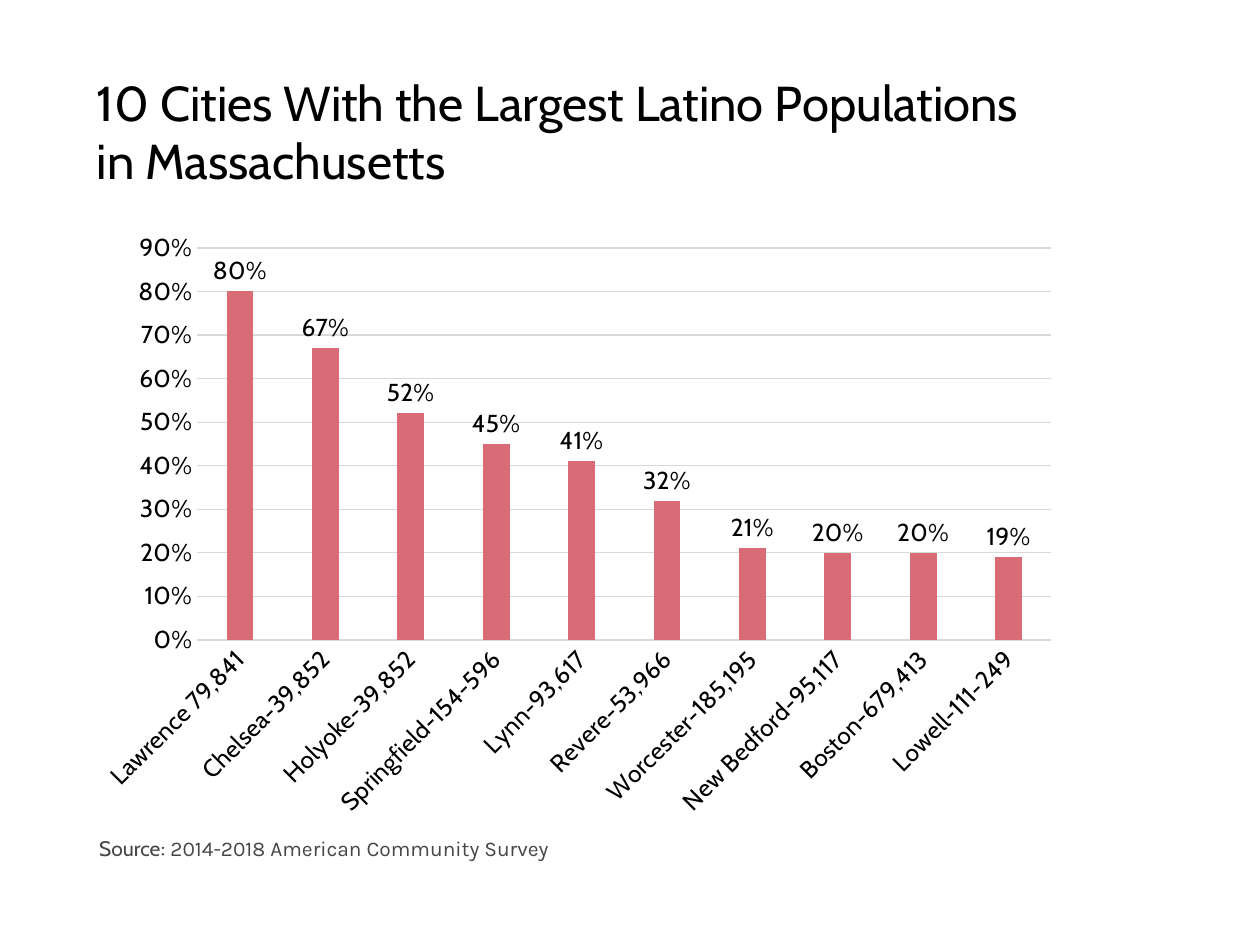
from typing import NamedTuple

from pptx import Presentation
from pptx.chart.data import CategoryChartData
from pptx.dml.color import RGBColor
from pptx.enum.chart import XL_CHART_TYPE, XL_LABEL_POSITION, XL_TICK_MARK
from pptx.enum.text import MSO_ANCHOR
from pptx.util import Cm, Pt

BLACK = RGBColor(0x00, 0x00, 0x00)
GRAY = RGBColor(0x46, 0x46, 0x46)
GRID = RGBColor(0xD9, 0xD9, 0xD9)
ROSE = RGBColor(0xD9, 0x6B, 0x77)
WHITE = RGBColor(0xFF, 0xFF, 0xFF)
HEAD_FONT, BODY_FONT = "Cabin", "Karla"


class Box(NamedTuple):
    left: float
    top: float
    width: float
    height: float

    def lengths(self) -> list:
        return [Cm(v) for v in self]


class City(NamedTuple):
    label: str
    share: float


CITIES = [
    City("Lawrence 79,841", 0.80),
    City("Chelsea-39,852", 0.67),
    City("Holyoke-39,852", 0.52),
    City("Springfield-154-596", 0.45),
    City("Lynn-93,617", 0.41),
    City("Revere-53,966", 0.32),
    City("Worcester-185,195", 0.21),
    City("New Bedford-95,117", 0.20),
    City("Boston-679,413", 0.20),
    City("Lowell-111-249", 0.19),
]


def set_font(font, size: float, color: RGBColor, name: str = HEAD_FONT) -> None:
    font.size, font.name, font.bold = Pt(size), name, False
    font.color.rgb = color


def add_text(s, box: Box, *runs: tuple[str, str], size: float,
             color: RGBColor, anchor=MSO_ANCHOR.TOP) -> None:
    """Add one paragraph made of (text, font name) runs."""
    tf = s.shapes.add_textbox(*box.lengths()).text_frame
    tf.word_wrap = True
    tf.vertical_anchor = anchor
    p = tf.paragraphs[0]
    for text, name in runs:
        r = p.add_run()
        r.text = text
        set_font(r.font, size, color, name)


def style_line(line) -> None:
    line.color.rgb = GRID
    line.width = Pt(0.75)


def add_city_chart(s, box: Box, cities: list[City]) -> None:
    data = CategoryChartData(number_format="0%")
    data.categories = [c.label for c in cities]
    data.add_series("Series 1", [c.share for c in cities])
    chart = s.shapes.add_chart(
        XL_CHART_TYPE.COLUMN_CLUSTERED, *box.lengths(), data).chart
    chart.has_legend = chart.has_title = False
    set_font(chart.font, 14, BLACK)

    # Columns and their labels
    plot = chart.plots[0]
    plot.gap_width, plot.overlap, plot.vary_by_categories = 219, -27, False
    fill = plot.series[0].format.fill
    fill.solid()
    fill.fore_color.rgb = ROSE
    plot.has_data_labels = True
    labels = plot.data_labels
    labels.show_value = True
    labels.number_format, labels.number_format_is_linked = "0%", False
    labels.position = XL_LABEL_POSITION.OUTSIDE_END
    set_font(labels.font, 14, BLACK)

    # Axes
    cat, val = chart.category_axis, chart.value_axis
    for axis in (cat, val):
        axis.major_tick_mark = axis.minor_tick_mark = XL_TICK_MARK.NONE
        set_font(axis.tick_labels.font, 14, BLACK)
    style_line(cat.format.line)
    cat.tick_labels.font._element.getparent().getparent().getparent()
    cat._element.txPr.bodyPr.set("rot", "-2700000")  # 45 degrees upwards
    val.minimum_scale, val.maximum_scale, val.major_unit = 0, 0.9, 0.1
    val.tick_labels.number_format = "0%"
    val.tick_labels.number_format_is_linked = False
    val.format.line.fill.background()
    val.has_major_gridlines = True
    style_line(val.major_gridlines.format.line)


def main() -> None:
    prs = Presentation()
    prs.slide_width, prs.slide_height = Cm(25.4), Cm(19.05)
    s = prs.slides.add_slide(prs.slide_layouts[6])
    s.background.fill.solid()
    s.background.fill.fore_color.rgb = WHITE

    # Title
    add_text(s, Box(1.7, 1.27, 19.89, 2.74),
             ("10 Cities With the Largest Latino Populations in Massachusetts",
              HEAD_FONT),
             size=28, color=BLACK, anchor=MSO_ANCHOR.MIDDLE)

    # Chart
    add_city_chart(s, Box(1.7, 4.45, 19.89, 12.27), CITIES)

    # Source line
    add_text(s, Box(1.75, 16.71, 22.58, 0.76),
             ("Source", HEAD_FONT),
             (": 2014-2018 American Community Survey", BODY_FONT),
             size=12, color=GRAY)

    prs.save("out.pptx")


if __name__ == "__main__":
    main()
